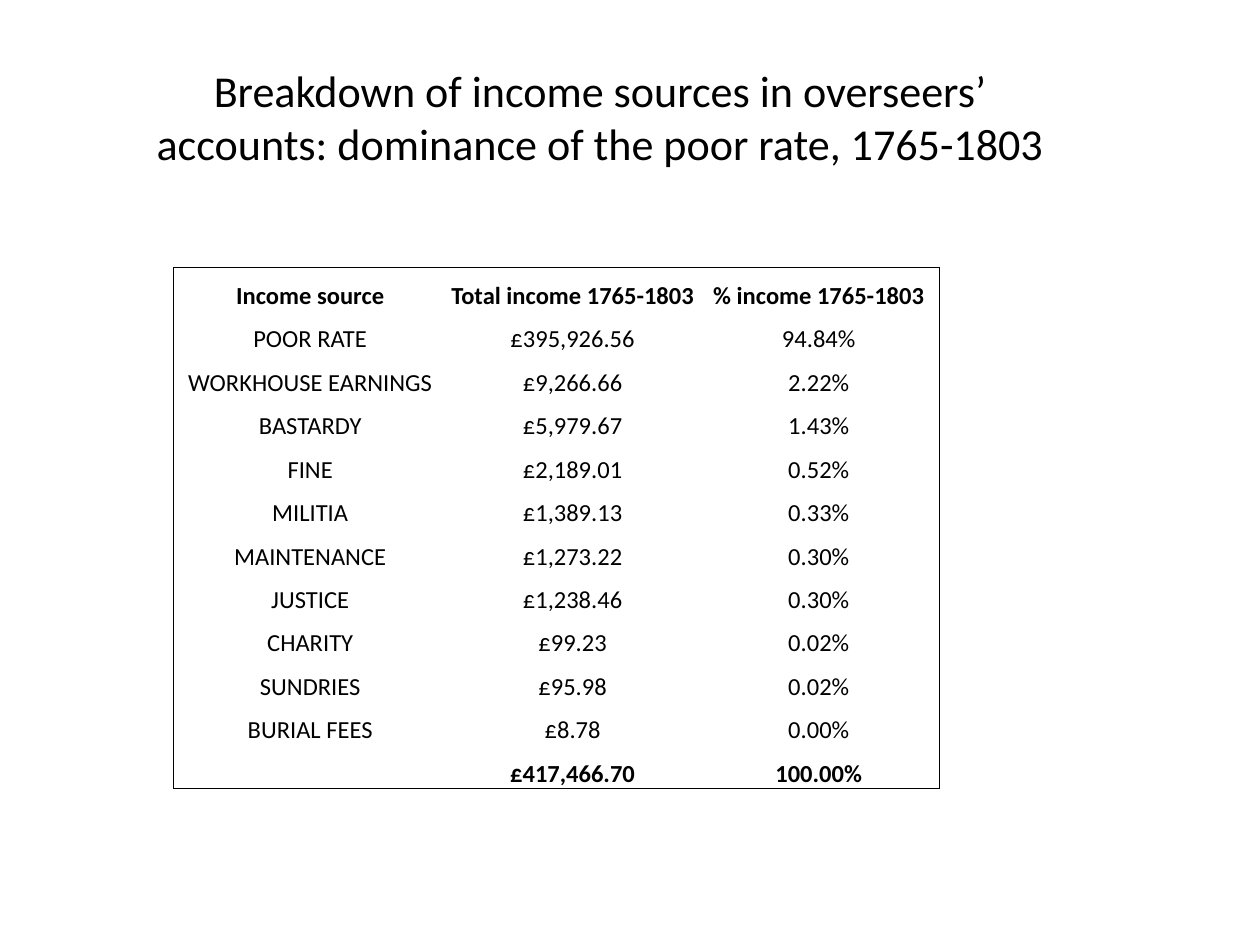
from lxml.etree import SubElement
from pptx import Presentation
from pptx.dml.color import RGBColor
from pptx.enum.text import MSO_ANCHOR, PP_ALIGN
from pptx.oxml.ns import qn
from pptx.util import Cm, Pt

FONT = "Calibri"
BLACK = "000000"
TITLE = ("Breakdown of income sources in overseers’ accounts: "
         "dominance of the poor rate, 1765-1803")
INCOME_ROWS = [
    ("Income source", "Total income 1765-1803", "% income 1765-1803"),
    ("POOR RATE", "£395,926.56", "94.84%"),
    ("WORKHOUSE EARNINGS", "£9,266.66", "2.22%"),
    ("BASTARDY", "£5,979.67", "1.43%"),
    ("FINE", "£2,189.01", "0.52%"),
    ("MILITIA", "£1,389.13", "0.33%"),
    ("MAINTENANCE", "£1,273.22", "0.30%"),
    ("JUSTICE", "£1,238.46", "0.30%"),
    ("CHARITY", "£99.23", "0.02%"),
    ("SUNDRIES", "£95.98", "0.02%"),
    ("BURIAL FEES", "£8.78", "0.00%"),
    ("", "£417,466.70", "100.00%"),
]
COLUMN_SHARES = (2.17, 2, 1.91)


def color(hex_string):
    return RGBColor.from_string(hex_string)


def format_paragraph(paragraph, size, bold=False):
    paragraph.alignment = PP_ALIGN.CENTER
    font = paragraph.font
    font.name, font.size, font.bold = FONT, Pt(size), bold
    font.color.rgb = color(BLACK)


def set_borders(cell, visible_sides):
    """Draw a thin line on the sides named (of L, R, T, B) and none on the rest."""
    properties = cell._tc.get_or_add_tcPr()
    for side in "LRTB":
        line = SubElement(properties, qn(f"a:ln{side}"), w=str(Pt(0.5)))
        if side in visible_sides:
            fill = SubElement(line, qn("a:solidFill"))
            SubElement(fill, qn("a:srgbClr"), val=BLACK)
        else:
            SubElement(line, qn("a:noFill"))


def add_title(slide, left, top, width, height):
    title = slide.shapes.title
    title.left, title.top, title.width, title.height = left, top, width, height
    frame = title.text_frame
    frame.text = TITLE
    frame.vertical_anchor = MSO_ANCHOR.MIDDLE
    format_paragraph(frame.paragraphs[0], 25.2)


def add_income_table(slide, left, top, width, height):
    last_row, last_column = len(INCOME_ROWS) - 1, len(COLUMN_SHARES) - 1
    table = slide.shapes.add_table(last_row + 1, last_column + 1,
                                   left, top, width, height).table
    table.first_row = table.horz_banding = False
    for column, share in zip(table.columns, COLUMN_SHARES):
        column.width = int(width * share / sum(COLUMN_SHARES))

    for row, texts in enumerate(INCOME_ROWS):
        for column, text in enumerate(texts):
            cell = table.cell(row, column)
            cell.margin_left = cell.margin_right = 0
            cell.margin_top = cell.margin_bottom = 0
            cell.vertical_anchor = MSO_ANCHOR.BOTTOM
            cell.text = text
            format_paragraph(cell.text_frame.paragraphs[0], 14,
                             bold=row in (0, last_row))
            edges = {"L": column == 0, "R": column == last_column,
                     "T": row == 0, "B": row == last_row}
            set_borders(cell, [side for side, outer in edges.items() if outer])
            cell.fill.background()


def main():
    presentation = Presentation()
    presentation.slide_width, presentation.slide_height = Cm(25.4), Cm(19.05)
    slide = presentation.slides.add_slide(presentation.slide_layouts[5])
    add_title(slide, Cm(2.9), Cm(0.76), Cm(18.4), Cm(3.18))
    add_income_table(slide, Cm(3.5), Cm(5.39), Cm(15.43), Cm(10.52))
    presentation.save("out.pptx")


if __name__ == "__main__":
    main()
